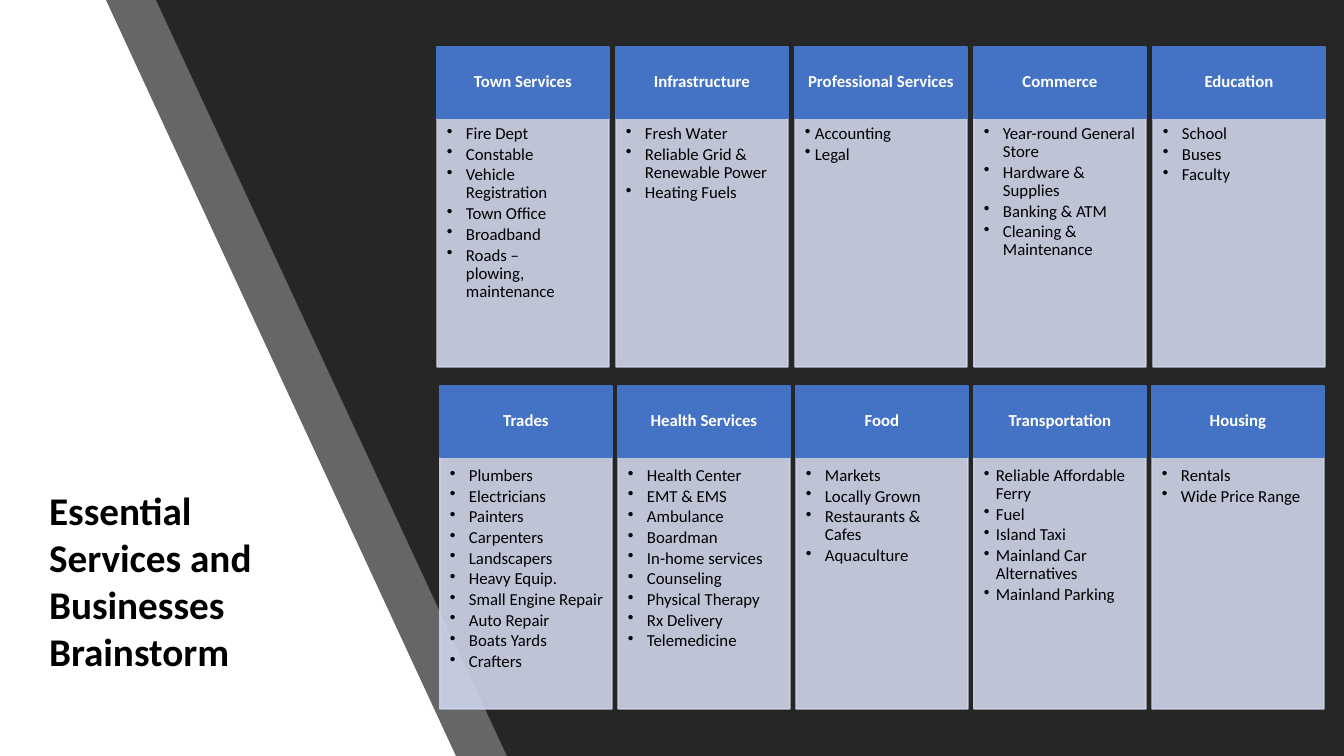
from dataclasses import dataclass

from lxml.etree import SubElement
from pptx import Presentation
from pptx.dml.color import RGBColor
from pptx.enum.shapes import MSO_SHAPE
from pptx.enum.text import MSO_ANCHOR, MSO_AUTO_SIZE, PP_ALIGN
from pptx.oxml.ns import qn
from pptx.util import Emu, Pt

WIDTH, HEIGHT = 1344, 756


def px(n):
    return Emu(round(n * 12192000 / WIDTH))


@dataclass(frozen=True)
class Theme:
    font: str = "Calibri"
    title_size: int = 28
    card_size: int = 12
    backdrop: str = "000000"
    paper: str = "FFFFFF"
    dark: str = "262626"
    header: str = "4472C4"
    body: str = "CFD5EA"
    text: str = "000000"
    header_text: str = "FFFFFF"


@dataclass(frozen=True)
class Card:
    heading: str
    items: tuple
    right: int = 5
    indent: int = 19


class Deck:
    def __init__(self, theme):
        self.theme = theme
        self.prs = Presentation()
        self.prs.slide_width, self.prs.slide_height = px(WIDTH), px(HEIGHT)
        self.s = self.prs.slides.add_slide(self.prs.slide_layouts[5])
        fill = self.s.background.fill
        fill.solid()
        fill.fore_color.rgb = RGBColor.from_string(theme.backdrop)

    def paint(self, fill, color, opacity=100):
        fill.solid()
        fill.fore_color.rgb = RGBColor.from_string(color)
        if opacity < 100:
            clr = fill._xPr.find(qn("a:solidFill"))[0]
            SubElement(clr, qn("a:alpha")).set("val", str(opacity * 1000))

    def style(self, p, size, color, bold=False):
        p.font.name, p.font.size, p.font.bold = self.theme.font, Pt(size), bold
        p.font.color.rgb = RGBColor.from_string(color)

    def rect(self, x, y, w, h, color, opacity=100, outline=True):
        sp = self.s.shapes.add_shape(MSO_SHAPE.RECTANGLE, px(x), px(y), px(w), px(h))
        sp.shadow.inherit = False
        self.paint(sp.fill, color, opacity)
        if outline:
            sp.line.width = Pt(1)
            self.paint(sp.line.fill, color, opacity)
        else:
            sp.line.fill.background()
        return sp

    def slanted_panel(self, top_x, bottom_x, opacity=100):
        """Dark area from a slanted left edge to the right side of the slide."""
        outline = self.s.shapes.build_freeform(px(WIDTH), px(HEIGHT))
        corners = [(bottom_x, HEIGHT), (top_x, 0), (WIDTH, 0)]
        outline.add_line_segments([(px(x), px(y)) for x, y in corners])
        sp = outline.convert_to_shape()
        sp.shadow.inherit = False
        self.paint(sp.fill, self.theme.dark, opacity)
        sp.line.fill.background()

    def title(self, x, y, w, h, lines):
        sp = self.s.shapes.title
        sp.left, sp.top, sp.width, sp.height = px(x), px(y), px(w), px(h)
        # The placeholder must lie above the background panels.
        sp.element.getparent().append(sp.element)
        tf = sp.text_frame
        tf.word_wrap, tf.auto_size = True, MSO_AUTO_SIZE.SHAPE_TO_FIT_TEXT
        tf.vertical_anchor = MSO_ANCHOR.TOP
        tf.text = "\n".join(lines)
        for p in tf.paragraphs:
            p.alignment = PP_ALIGN.LEFT
            p.line_spacing, p.space_before = 1.0, Pt(0)
            self.style(p, self.theme.title_size, self.theme.text, bold=True)

    def header(self, x, y, w, h, heading):
        tf = self.rect(x, y, w, h, self.theme.header).text_frame
        tf.word_wrap, tf.vertical_anchor = True, MSO_ANCHOR.MIDDLE
        tf.margin_left = tf.margin_right = px(4)
        tf.text = heading
        p = tf.paragraphs[0]
        p.alignment, p.line_spacing = PP_ALIGN.CENTER, 0.9
        self.style(p, self.theme.card_size, self.theme.header_text, bold=True)

    def bullet_list(self, x, y, w, h, card):
        tf = self.rect(x, y, w, h, self.theme.body, opacity=90).text_frame
        tf.word_wrap, tf.vertical_anchor = True, MSO_ANCHOR.TOP
        tf.margin_left = tf.margin_top = px(10)
        tf.margin_right, tf.margin_bottom = px(card.right), px(5)
        tf.text = "\n".join(card.items)
        for p in tf.paragraphs:
            p.alignment, p.line_spacing = PP_ALIGN.LEFT, 0.9
            p.space_after = Pt(1.8)
            self.style(p, self.theme.card_size, self.theme.text)
            pPr = p._p.get_or_add_pPr()
            pPr.set("marL", str(px(card.indent)))
            pPr.set("indent", str(-px(card.indent)))
            bullet = pPr.makeelement(qn("a:buChar"), {"char": "•"})
            pPr.find(qn("a:defRPr")).addprevious(bullet)

    def card_row(self, x, step, header_y, body_y, cards):
        for i, card in enumerate(cards):
            left = x + i * step
            self.bullet_list(left, body_y, 172, 252, card)
            self.header(left, header_y, 172, 71, card.heading)


TOP_CARDS = (
    Card("Town Services", ("Fire Dept", "Constable", "Vehicle Registration", "Town Office",
                           "Broadband", "Roads – plowing, maintenance"), right=40),
    Card("Infrastructure", ("Fresh Water", "Reliable Grid & Renewable Power", "Heating Fuels")),
    Card("Professional Services", ("Accounting", "Legal"), indent=10),
    Card("Commerce", ("Year-round General Store", "Hardware & Supplies", "Banking & ATM",
                      "Cleaning & Maintenance"), right=10),
    Card("Education", ("School", "Buses", "Faculty")),
)
BOTTOM_CARDS = (
    Card("Trades", ("Plumbers", "Electricians", "Painters", "Carpenters", "Landscapers",
                    "Heavy Equip.", "Small Engine Repair", "Auto Repair", "Boats Yards",
                    "Crafters")),
    Card("Health Services", ("Health Center", "EMT & EMS", "Ambulance", "Boardman",
                             "In-home services", "Counseling", "Physical Therapy",
                             "Rx Delivery", "Telemedicine")),
    Card("Food", ("Markets", "Locally Grown", "Restaurants & Cafes", "Aquaculture"), right=14),
    Card("Transportation", ("Reliable Affordable Ferry", "Fuel", "Island Taxi",
                            "Mainland Car Alternatives", "Mainland Parking"),
         right=10, indent=12),
    Card("Housing", ("Rentals", "Wide Price Range")),
)


def main():
    deck = Deck(Theme())
    deck.rect(0, 0, WIDTH, HEIGHT, deck.theme.paper, outline=False)
    deck.slanted_panel(106, 456, opacity=70)
    deck.slanted_panel(156, 507)
    deck.title(39, 481, 265, 201, ("Essential Services and Businesses", "Brainstorm"))
    deck.card_row(437, 179, 47, 115, TOP_CARDS)
    deck.card_row(440, 178, 386, 457, BOTTOM_CARDS)
    deck.prs.save("out.pptx")


if __name__ == "__main__":
    main()
